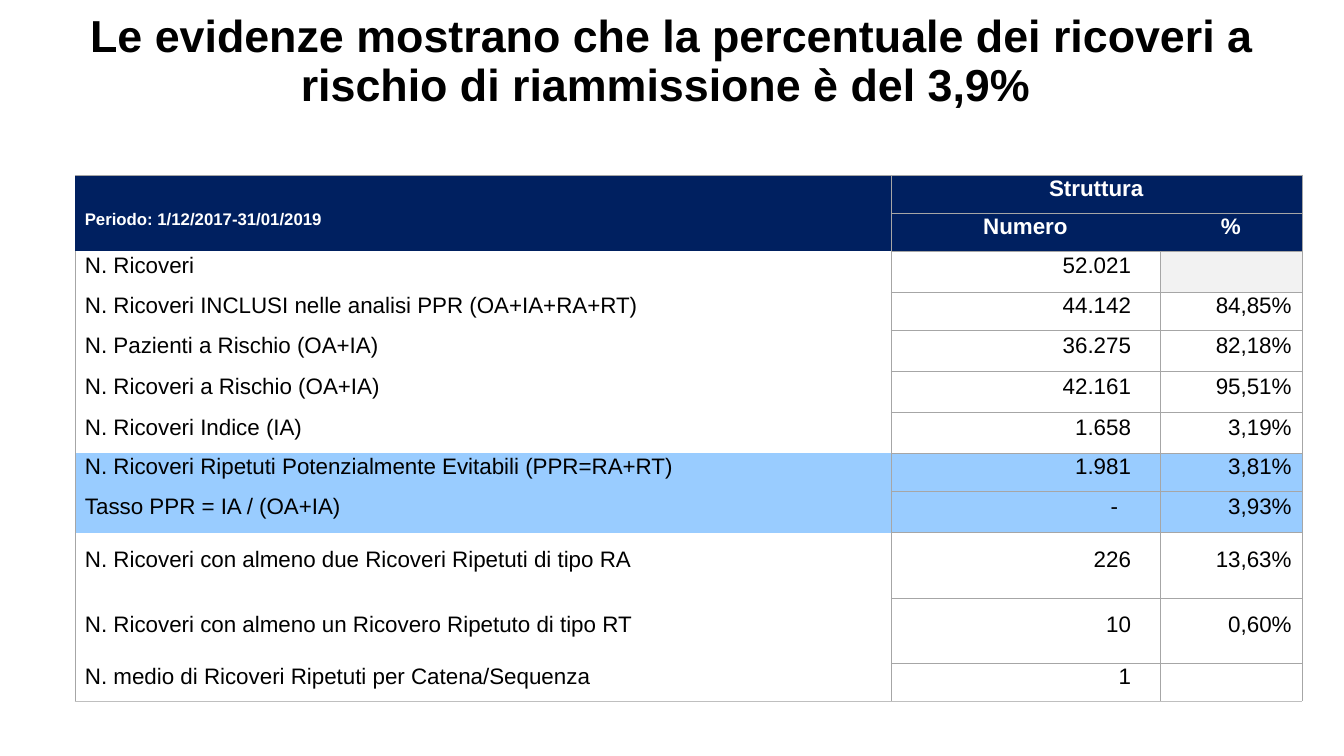
import pptx
import pptx.util
import pptx.dml.color
import pptx.enum.shapes
import pptx.enum.text
import pptx.oxml.ns
import lxml.etree

Pt = pptx.util.Pt
Align = pptx.enum.text.PP_ALIGN
Anchor = pptx.enum.text.MSO_ANCHOR

HUES = {"navy": "002060", "sky": "99CCFF", "pale": "F2F2F2", "white": "FFFFFF",
        "black": "000000", "rule": "A6A6A6", "base": "BFBFBF"}
PLAIN = "{2D5ABB26-0587-4C30-8999-92F81FD0307C}"
WIDTHS = [183.6, 198, 141.1, 60.2, 192.2, 101.2]
LOW, MID, TALL = 27.1, 29.4, 46.6
ROWS = [
    ("N. Ricoveri", "52.021", "", 1, MID),
    ("N. Ricoveri INCLUSI nelle analisi PPR (OA+IA+RA+RT)", "44.142", "84,85%", 3, LOW),
    ("N. Pazienti a Rischio (OA+IA)", "36.275", "82,18%", 2, MID),
    ("N. Ricoveri a Rischio (OA+IA)", "42.161", "95,51%", 2, MID),
    ("N. Ricoveri Indice (IA)", "1.658", "3,19%", 2, MID),
    ("N. Ricoveri Ripetuti Potenzialmente Evitabili (PPR=RA+RT)", "1.981", "3,81%", 4, LOW),
    ("Tasso PPR = IA / (OA+IA)", "-", "3,93%", 2, MID),
    ("N. Ricoveri con almeno due Ricoveri Ripetuti di tipo RA", "226", "13,63%", 3, TALL),
    ("N. Ricoveri con almeno un Ricovero Ripetuto di tipo RT", "10", "0,60%", 3, TALL),
    ("N. medio di Ricoveri Ripetuti per Catena/Sequenza", "1", "", 3, LOW),
]
LAST = len(ROWS) + 1
MARKED = ("N. Ricoveri Ripetuti", "Tasso PPR")


def tint(hue):
    return pptx.dml.color.RGBColor.from_string(HUES[hue])


def apply(thing, form):
    for name, value in form.items():
        setattr(thing, name, value)


def write(frame, text, size, hue, bold, form):
    para = frame.paragraphs[0]
    apply(para, form)
    run = para.add_run()
    run.text = text
    apply(run.font, {"name": "Arial", "size": Pt(size), "bold": bold})
    run.font.color.rgb = tint(hue)


def panel(slide, box):
    shape = slide.shapes.add_shape(pptx.enum.shapes.MSO_SHAPE.RECTANGLE, *map(Pt, box))
    shape.shadow.inherit = False
    shape.fill.solid()
    shape.fill.fore_color.rgb = tint("white")
    shape.line.color.rgb = tint("white")
    shape.line.width = Pt(1)


def label(slide, box, text, size, hue, form):
    frame = slide.shapes.add_textbox(*map(Pt, box)).text_frame
    frame.word_wrap = True
    write(frame, text, size, hue, True, form)


def edge(cell, sides):
    props = cell._tc.get_or_add_tcPr()
    for side in "LRTB":
        line = lxml.etree.SubElement(props, pptx.oxml.ns.qn("a:ln" + side), w="762")
        if side in sides:
            fill = lxml.etree.SubElement(line, pptx.oxml.ns.qn("a:solidFill"))
            lxml.etree.SubElement(fill, pptx.oxml.ns.qn("a:srgbClr"), val=HUES[sides[side]])
        else:
            lxml.etree.SubElement(line, pptx.oxml.ns.qn("a:noFill"))


def sides(row, col, span):
    rules = {}
    if row == LAST:
        rules["B"] = "base"
    if col > 3:
        names = "LRT" if row == LAST else "LRTB"
        if row == 1:
            names = "LTB" if col == 4 else "RTB"
        rules.update(dict.fromkeys(names, "rule"))
    else:
        if row == 0:
            rules["T"] = "rule"
        if col == 0 and row > 1:
            rules["L"] = "rule"
        if col + span == 4:
            rules["R"] = "rule"
    return rules


def shade(row, col):
    if row < 2:
        return "navy"
    if ROWS[row - 2][0].startswith(MARKED):
        return "sky"
    return "pale" if (row, col) == (2, 5) else "white"


def content(row):
    if row == 0:
        return {4: "Struttura"}, {4: 2}
    if row == 1:
        return {4: "Numero", 5: "%"}, {0: 4}
    name, count, share, span, _ = ROWS[row - 2]
    return {0: name, 4: count, 5: share}, {0: span}


def fill(cell, row, col, text, span):
    edge(cell, sides(row, col, span))
    cell.fill.solid()
    cell.fill.fore_color.rgb = tint(shade(row, col))
    pad = 3.6 if row > 1 and text else 0
    right = 7.2
    if row > 1 and col == 4:
        right = 30 if text == "-" else 20.7
    apply(cell, {"margin_left": Pt(7.2), "margin_right": Pt(right), "margin_top": Pt(pad),
                 "margin_bottom": Pt(pad), "vertical_anchor": Anchor.MIDDLE})
    if text:
        align = Align.CENTER if row < 2 else Align.RIGHT if col > 3 else Align.LEFT
        write(cell.text_frame, text, 16, "white" if row < 2 else "black", row < 2,
              {"alignment": align, "line_spacing": 0.33})


def grid(slide, box):
    table = slide.shapes.add_table(LAST + 1, len(WIDTHS), *map(Pt, box)).table
    apply(table, {"first_row": False, "horz_banding": False})
    table._tbl.tblPr.find(pptx.oxml.ns.qn("a:tableStyleId")).text = PLAIN
    for col, width in enumerate(WIDTHS):
        table.columns[col].width = Pt(width)
    for row, height in enumerate([LOW, LOW] + [item[4] for item in ROWS]):
        table.rows[row].height = Pt(height)
        texts, spans = content(row)
        for col in range(len(WIDTHS)):
            fill(table.cell(row, col), row, col, texts.get(col, ""), spans.get(col, 1))
        for col, span in spans.items():
            if span > 1:
                table.cell(row, col).merge(table.cell(row, col + span - 1))


def report(slide, left, top):
    panel(slide, (left - 13.2, top - 122.8, 911.5, 97.9))
    grid(slide, (left, top, sum(WIDTHS), 375.7))
    label(slide, (left - 23, top - 118.4, 899.3, 64.8),
          "Le evidenze mostrano che la percentuale dei ricoveri a rischio di riammissione è del 3,9% ",
          32, "black", {"alignment": Align.CENTER, "line_spacing": 0.9})
    label(slide, (left, top + 20.6, 364.3, 21.6), "Periodo: 1/12/2017-31/01/2019",
          12, "white", {"alignment": Align.LEFT})


def main():
    deck = pptx.Presentation()
    apply(deck, {"slide_width": Pt(960), "slide_height": Pt(540)})
    report(deck.slides.add_slide(deck.slide_layouts[6]), 53.5, 125)
    deck.save("out.pptx")


if __name__ == "__main__":
    main()
